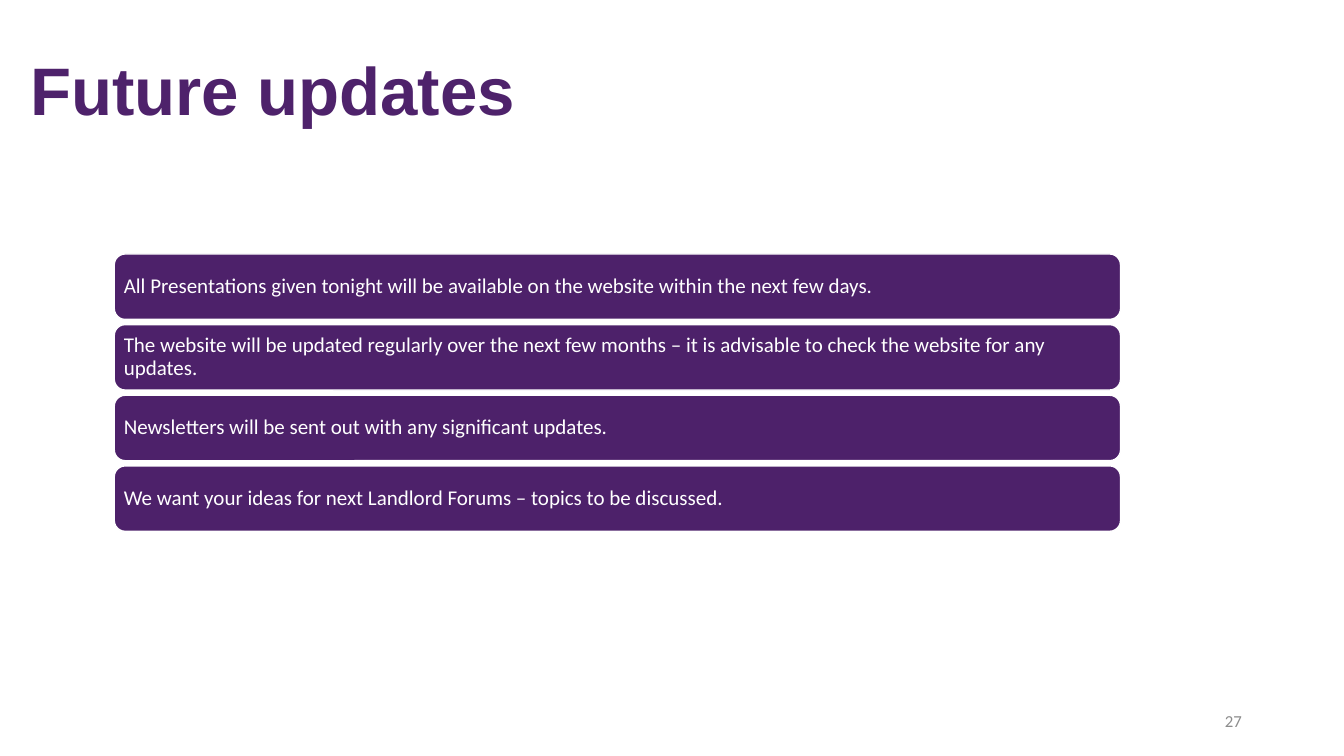
import pptx
import pptx.dml.color
import pptx.enum.shapes
import pptx.enum.text
import pptx.util

Cm = pptx.util.Cm
ALIGN = pptx.enum.text.PP_ALIGN
ANCHOR = pptx.enum.text.MSO_ANCHOR


class UpdatesSlide:
    """Draws the parts of the slide in one shared style."""

    colors = {"title": "4E226B", "bar": "4D216A", "white": "FFFFFF", "number": "8C8C8C"}

    def __init__(self, deck):
        self.slide = deck.slides.add_slide(deck.slide_layouts[6])

    def color(self, name):
        return pptx.dml.color.RGBColor.from_string(self.colors[name])

    def fill_text(self, frame, wording, size, font, color, anchor, align=ALIGN.LEFT,
                  bold=False, spacing=0.9):
        frame.word_wrap = True
        frame.vertical_anchor = anchor
        paragraph = frame.paragraphs[0]
        paragraph.alignment = align
        paragraph.line_spacing = spacing
        run = paragraph.add_run()
        run.text = wording
        run.font.size = pptx.util.Pt(size)
        run.font.name = font
        run.font.bold = bold
        run.font.color.rgb = self.color(color)

    def text(self, left, top, width, height, *style, **options):
        box = self.slide.shapes.add_textbox(Cm(left), Cm(top), Cm(width), Cm(height))
        self.fill_text(box.text_frame, *style, **options)

    def bar(self, left, top, width, height, wording):
        bar = self.slide.shapes.add_shape(
            pptx.enum.shapes.MSO_SHAPE.ROUNDED_RECTANGLE,
            Cm(left), Cm(top), Cm(width), Cm(height))
        bar.shadow.inherit = False
        bar.fill.solid()
        bar.fill.fore_color.rgb = self.color("bar")
        bar.line.color.rgb = self.color("white")
        bar.line.width = pptx.util.Pt(1)
        frame = bar.text_frame
        frame.margin_left = frame.margin_right = Cm(0.16)
        frame.margin_top = frame.margin_bottom = Cm(0.16)
        self.fill_text(frame, wording, 15, "Calibri", "white", ANCHOR.MIDDLE)


def main():
    deck = pptx.Presentation()
    deck.slide_width, deck.slide_height = Cm(33.87), Cm(19.05)
    page = UpdatesSlide(deck)
    page.text(0.51, 0.81, 29.21, 2.59, "Future updates", 48, "Arial", "title",
              ANCHOR.BOTTOM, bold=True)
    updates = [
        "All Presentations given tonight will be available on the website within the next few days.",
        "The website will be updated regularly over the next few months – it is advisable to check "
        "the website for any updates.",
        "Newsletters will be sent out with any significant updates.",
        "We want your ideas for next Landlord Forums – topics to be discussed.",
    ]
    for row, update in enumerate(updates):
        page.bar(2.88, 6.4 + 1.78 * row, 25.36, 1.65, update)
    page.text(23.93, 17.65, 7.62, 1.02, "27", 12, "Calibri", "number",
              ANCHOR.MIDDLE, align=ALIGN.RIGHT, spacing=1.0)
    deck.save("out.pptx")


if __name__ == "__main__":
    main()
